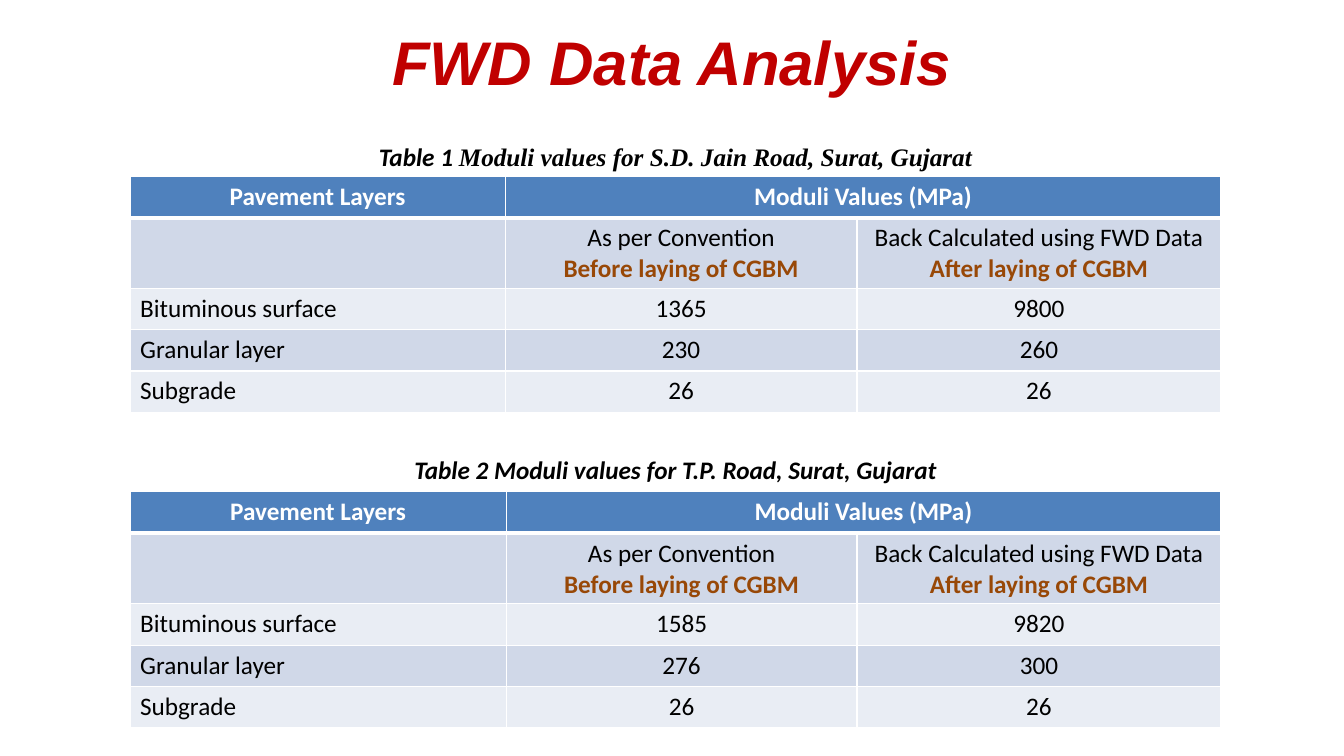
from lxml.etree import SubElement
from pptx import Presentation
from pptx.dml.color import RGBColor
from pptx.enum.text import MSO_ANCHOR, PP_ALIGN
from pptx.oxml.ns import qn
from pptx.util import Emu, Pt

PX = 9144  # EMU per px, 100 px to the inch
COLORS = {
    "title": "C00000",
    "header": "4F81BD",
    "band_dark": "D0D8E8",
    "band_light": "E9EDF4",
    "accent": "984807",
    "text": "000000",
    "white": "FFFFFF",
}
LEFT, WIDTH = 129, 1082
ROW_HEIGHTS = [41, 70, 41, 41, 41]
LAYERS = ["Bituminous surface", "Granular layer", "Subgrade"]
METHODS = [
    ("As per Convention", "Before laying of CGBM"),
    ("Back Calculated using FWD Data", "After laying of CGBM"),
]


def px(length):
    return Emu(length * PX)


def color(name):
    return RGBColor.from_string(COLORS[name])


def add_run(paragraph, text, color_name="text", size=18, font="Calibri", bold=False, italic=False):
    run = paragraph.add_run()
    run.text = text
    run.font.name = font
    run.font.size = Pt(size)
    run.font.bold = bold
    run.font.italic = italic
    run.font.color.rgb = color(color_name)


def add_title(slide, text):
    title = slide.shapes.title
    title.left, title.top, title.width, title.height = px(0), px(15), px(1333), px(91)
    frame = title.text_frame
    frame.vertical_anchor = MSO_ANCHOR.MIDDLE
    paragraph = frame.paragraphs[0]
    paragraph.alignment = PP_ALIGN.CENTER
    add_run(paragraph, text, "title", 44, "Arial", bold=True, italic=True)


def add_caption(slide, top, runs):
    """Add a centred table caption from (text, font) runs."""
    box = slide.shapes.add_textbox(px(LEFT), px(top), px(WIDTH), px(40))
    frame = box.text_frame
    frame.word_wrap = True
    frame.vertical_anchor = MSO_ANCHOR.MIDDLE
    paragraph = frame.paragraphs[0]
    paragraph.alignment = PP_ALIGN.CENTER
    for text, font in runs:
        add_run(paragraph, text, font=font, bold=True, italic=True)


def set_borders(cell, top, bottom):
    """Draw white cell borders; top and bottom are widths in points."""
    properties = cell._tc.get_or_add_tcPr()
    sides = [("a:lnL", 1), ("a:lnR", 1), ("a:lnT", top), ("a:lnB", bottom)]
    for index, (tag, width) in enumerate(sides):
        line = SubElement(properties, qn(tag), w=str(Pt(width)))
        fill = SubElement(line, qn("a:solidFill"))
        SubElement(fill, qn("a:srgbClr"), val=COLORS["white"])
        properties.insert(index, line)  # borders come before the fill


def write_cell(cell, lines, alignment=PP_ALIGN.CENTER):
    """Write (text, color name, bold) lines, one paragraph each."""
    frame = cell.text_frame
    for index, (text, color_name, bold) in enumerate(lines):
        paragraph = frame.add_paragraph() if index else frame.paragraphs[0]
        paragraph.alignment = alignment
        add_run(paragraph, text, color_name, bold=bold)


def add_moduli_table(slide, top, column_widths, moduli):
    frame = slide.shapes.add_table(
        len(ROW_HEIGHTS), len(column_widths), px(LEFT), px(top), px(WIDTH), px(sum(ROW_HEIGHTS))
    )
    table = frame.table
    for column, width in zip(table.columns, column_widths):
        column.width = px(width)
    for index, (row, height) in enumerate(zip(table.rows, ROW_HEIGHTS)):
        row.height = px(height)
        band = "header" if index == 0 else ("band_light", "band_dark")[index % 2]
        for cell in row.cells:
            cell.fill.solid()
            cell.fill.fore_color.rgb = color(band)
            set_borders(cell, top=3 if index == 1 else 1, bottom=3 if index == 0 else 1)

    table.cell(0, 1).merge(table.cell(0, 2))
    for column, heading in enumerate(["Pavement Layers", "Moduli Values (MPa)"]):
        write_cell(table.cell(0, column), [(heading, "white", True)])
    for column, (method, stage) in enumerate(METHODS, start=1):
        write_cell(table.cell(1, column), [(method, "text", False), (stage, "accent", True)])
    for row, (layer, values) in enumerate(zip(LAYERS, moduli), start=2):
        write_cell(table.cell(row, 0), [(layer, "text", False)], PP_ALIGN.LEFT)
        for column, value in enumerate(values, start=1):
            write_cell(table.cell(row, column), [(str(value), "text", False)])


def main():
    presentation = Presentation()
    presentation.slide_width, presentation.slide_height = px(1333), px(750)
    slide = presentation.slides.add_slide(presentation.slide_layouts[5])

    add_title(slide, "FWD Data Analysis")
    add_caption(slide, 135, [
        ("Table 1 ", "Calibri"),
        ("Moduli values for S.D. Jain Road, Surat, Gujarat", "Times New Roman"),
    ])
    add_caption(slide, 446, [("Table 2 Moduli values for T.P. Road, Surat, Gujarat", "Calibri")])
    add_moduli_table(slide, 175, [372, 349, 361], [(1365, 9800), (230, 260), (26, 26)])
    add_moduli_table(slide, 488, [373, 348, 361], [(1585, 9820), (276, 300), (26, 26)])

    presentation.save("out.pptx")


if __name__ == "__main__":
    main()
